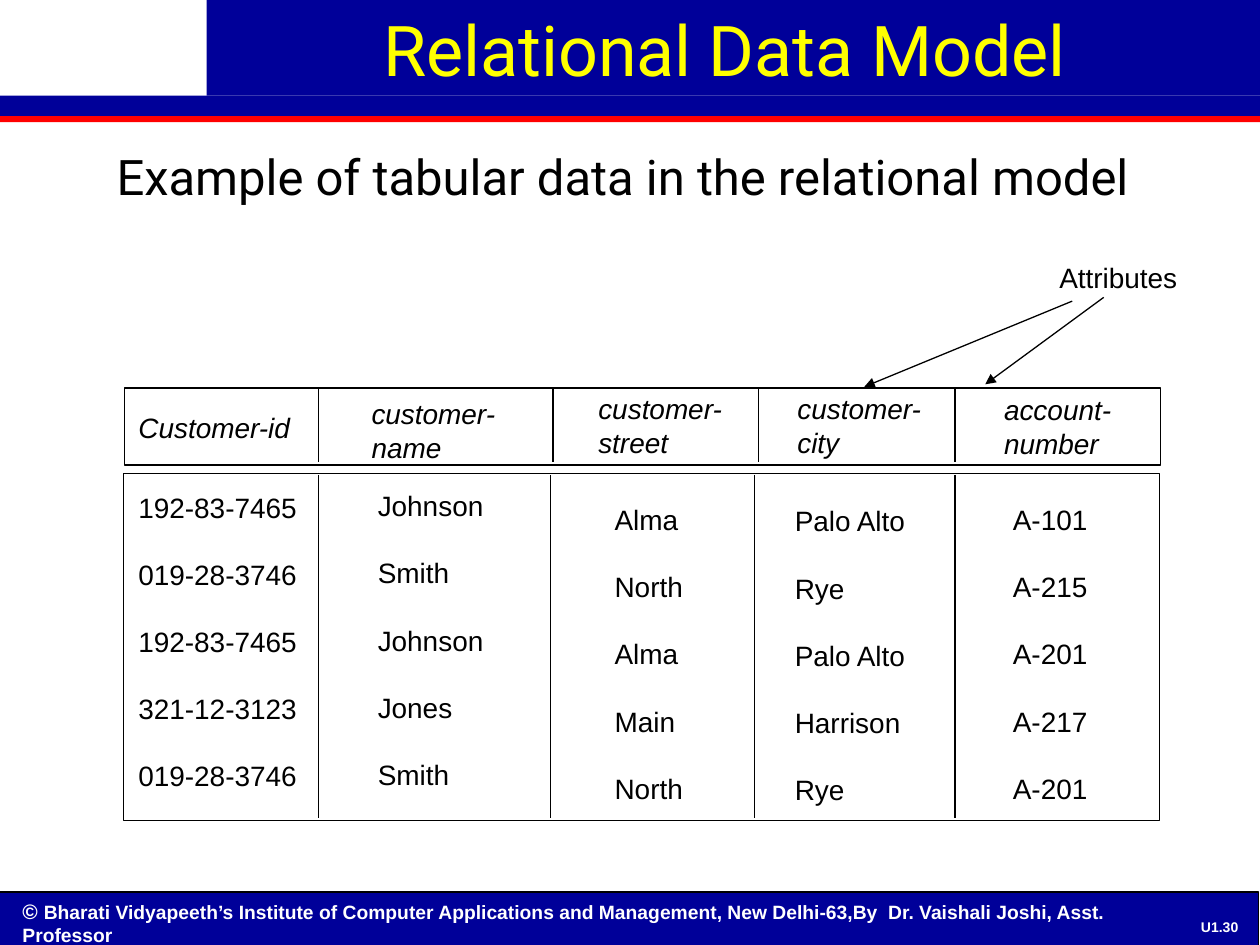
from dataclasses import dataclass

import pptx
import pptx.dml.color
import pptx.enum.shapes
import pptx.enum.text
import pptx.oxml
import pptx.oxml.ns
import pptx.util

Inches, Pt = pptx.util.Inches, pptx.util.Pt
RGBColor = pptx.dml.color.RGBColor
ALIGN = pptx.enum.text.PP_ALIGN
ANCHOR = pptx.enum.text.MSO_ANCHOR

NAVY = RGBColor(0x00, 0x00, 0x99)
RED = RGBColor(0xFF, 0x00, 0x00)
YELLOW = RGBColor(0xFF, 0xFF, 0x00)
WHITE = RGBColor(0xFF, 0xFF, 0xFF)
BLACK = RGBColor(0x00, 0x00, 0x00)
LINE_PITCH = Pt(19.2)


@dataclass(frozen=True)
class Box:
    left: float
    top: float
    width: float
    height: float

    def lengths(self) -> list:
        return [Inches(v) for v in (self.left, self.top, self.width, self.height)]


@dataclass(frozen=True)
class Style:
    size: float = 16
    color: RGBColor = BLACK
    font: str = "Arial"
    bold: bool = False
    italic: bool = False


@dataclass(frozen=True)
class Column:
    heading: list
    heading_box: Box
    values: list
    values_box: Box


@dataclass(frozen=True)
class Segment:
    start: tuple
    end: tuple


def add_block(slide, box: Box, fill: RGBColor, outlined: bool = False) -> None:
    block = slide.shapes.add_shape(
        pptx.enum.shapes.MSO_SHAPE.RECTANGLE, *box.lengths())
    block.shadow.inherit = False
    block.fill.solid()
    block.fill.fore_color.rgb = fill
    if outlined:
        block.line.color.rgb = BLACK
        block.line.width = Pt(0.75)
    else:
        block.line.fill.background()


def style_run(run, style: Style) -> None:
    run.font.name = style.font
    run.font.size = Pt(style.size)
    run.font.color.rgb = style.color
    run.font.bold = style.bold
    run.font.italic = style.italic


def add_text(slide, box: Box, lines: list, style: Style, align=ALIGN.LEFT,
             anchor=ANCHOR.TOP, wrap: bool = False, pitch=None, gap=None):
    frame = slide.shapes.add_textbox(*box.lengths()).text_frame
    frame.word_wrap = wrap
    frame.vertical_anchor = anchor
    frame.text = "\n".join(lines)
    for index, paragraph in enumerate(frame.paragraphs):
        paragraph.alignment = align
        if pitch is not None:
            paragraph.line_spacing = pitch
        if gap is not None and index > 0:
            paragraph.space_before = gap
        for run in paragraph.runs:
            style_run(run, style)
    return frame


def add_line(slide, segment: Segment, arrow: bool = False) -> None:
    line = slide.shapes.add_connector(
        pptx.enum.shapes.MSO_CONNECTOR.STRAIGHT,
        *[Inches(v) for v in segment.start + segment.end])
    line.line.color.rgb = BLACK
    line.line.width = Pt(0.75)
    if arrow:
        head = pptx.oxml.parse_xml(
            f'<a:tailEnd {pptx.oxml.ns.nsdecls("a")} type="triangle"/>')
        line.line._get_or_add_ln().append(head)
    line._element.spPr.append(pptx.oxml.parse_xml(
        f'<a:effectLst {pptx.oxml.ns.nsdecls("a")}/>'))


COLUMNS = [
    Column(["Customer-id"], Box(1, 3.21, 1.41, 0.37),
           ["192-83-7465", "019-28-3746", "192-83-7465", "321-12-3123",
            "019-28-3746"], Box(1, 3.84, 1.46, 2.51)),
    Column(["customer-", "name"], Box(2.85, 3.1, 1.19, 0.64),
           ["Johnson", "Smith", "Johnson", "Jones", "Smith"],
           Box(2.9, 3.83, 1.04, 2.51)),
    Column(["customer-", "street"], Box(4.65, 3.06, 1.19, 0.64),
           ["Alma", "North", "Alma", "Main", "North"],
           Box(4.78, 3.94, 0.74, 2.51)),
    Column(["customer-", "city"], Box(6.23, 3.06, 1.19, 0.64),
           ["Palo Alto", "Rye", "Palo Alto", "Harrison", "Rye"],
           Box(6.21, 3.95, 1.09, 2.51)),
    Column(["account-", "number"], Box(7.87, 3.07, 1.05, 0.64),
           ["A-101", "A-215", "A-201", "A-217", "A-201"],
           Box(7.94, 3.94, 0.79, 2.51)),
]
HEADING_DIVIDERS = [2.53, 4.39, 6.02, 7.58]
VALUE_DIVIDERS = [2.53, 4.37, 5.99, 7.58]
ATTRIBUTE_ARROWS = [Segment((8.76, 2.36), (7.82, 3.05)),
                    Segment((8.51, 2.39), (6.86, 3.07))]


def main() -> None:
    deck = pptx.Presentation()
    deck.slide_width, deck.slide_height = Inches(10), Inches(7.5)
    slide = deck.slides.add_slide(deck.slide_layouts[6])

    # Title band
    add_block(slide, Box(0, 0.92, 10, 0.05), RED)
    add_block(slide, Box(1.64, 0, 8.36, 0.76), NAVY)
    add_block(slide, Box(0, 0.76, 10, 0.16), NAVY)
    add_text(slide, Box(1.5, 0, 8.5, 0.88), ["Relational Data Model"],
             Style(40, YELLOW, "Roboto"), ALIGN.CENTER, wrap=True)

    # Footer
    add_block(slide, Box(-0.01, 7.08, 10, 0.43), NAVY, outlined=True)
    footer = add_text(slide, Box(0.08, 7.08, 9.48, 0.49), ["© "],
                      Style(12, WHITE, bold=True), wrap=True)
    owner = footer.paragraphs[0].add_run()
    owner.text = ("Bharati Vidyapeeth’s Institute of Computer Applications and "
                  "Management, New Delhi-63,By  Dr. Vaishali Joshi, Asst. Professor")
    style_run(owner, Style(11, WHITE, bold=True))
    add_text(slide, Box(9.42, 7.26, 0.52, 0.19), ["U1.30"],
             Style(8, WHITE, bold=True), ALIGN.CENTER, ANCHOR.MIDDLE)

    # Subtitle
    add_text(slide, Box(0.69, 1.11, 8.5, 0.71),
             ["Example of tabular data in the relational model"],
             Style(28, font="Roboto"), ALIGN.CENTER, wrap=True)

    # Relation: heading frame, value frame, columns and dividers
    add_block(slide, Box(0.99, 3.08, 8.22, 0.61), WHITE, outlined=True)
    add_block(slide, Box(0.98, 3.76, 8.22, 2.75), WHITE, outlined=True)
    for column in COLUMNS:
        add_text(slide, column.heading_box, column.heading,
                 Style(italic=True), pitch=LINE_PITCH)
        add_text(slide, column.values_box, column.values, Style(),
                 pitch=LINE_PITCH, gap=LINE_PITCH)
    for x in HEADING_DIVIDERS:
        add_line(slide, Segment((x, 3.09), (x, 3.67)))
    for x in VALUE_DIVIDERS:
        add_line(slide, Segment((x, 3.77), (x, 6.49)))

    # Attributes callout
    add_text(slide, Box(8.31, 2.02, 1.14, 0.37), ["Attributes"], Style(),
             pitch=LINE_PITCH)
    for arrow in ATTRIBUTE_ARROWS:
        add_line(slide, arrow, arrow=True)

    deck.save("out.pptx")


if __name__ == "__main__":
    main()
